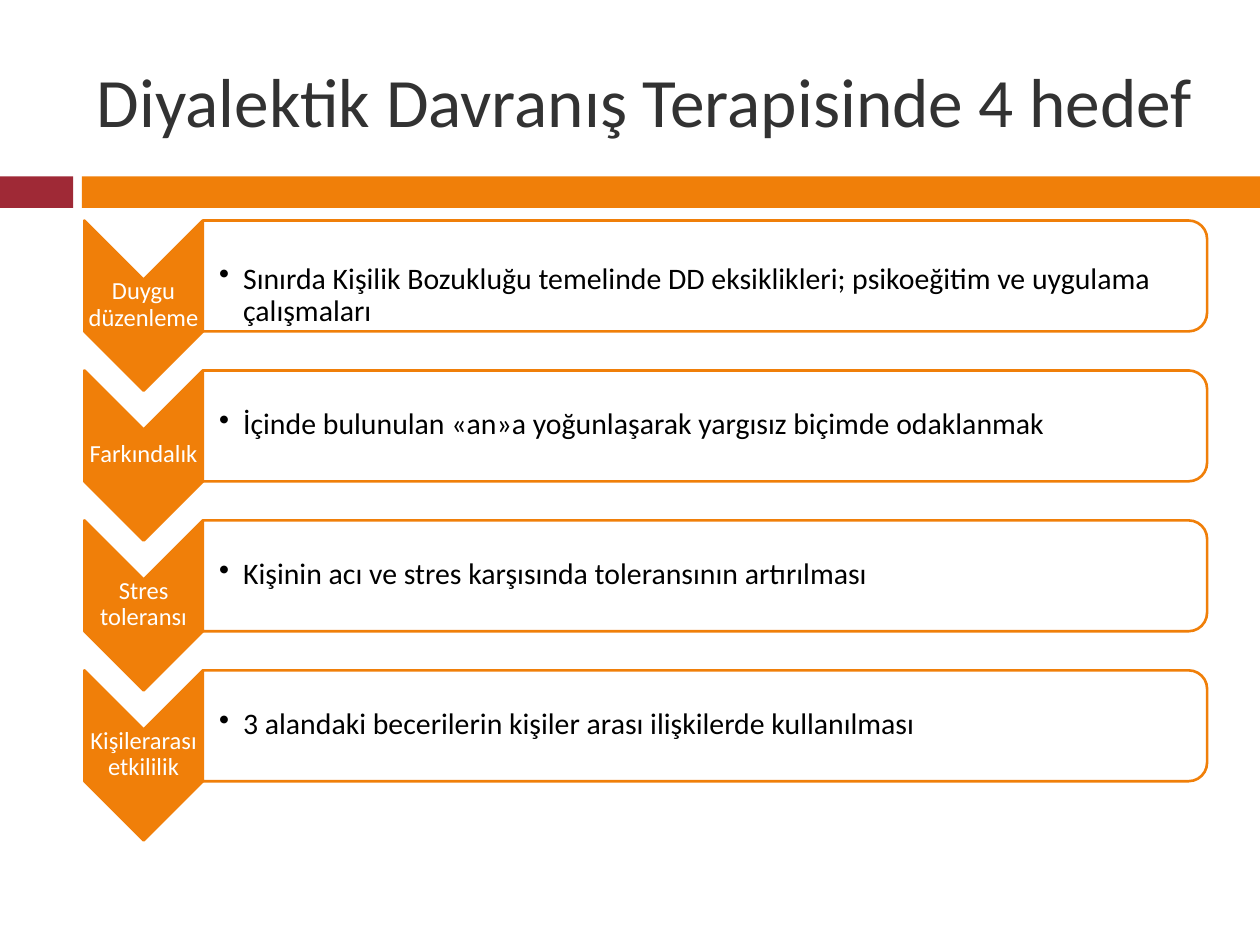
from dataclasses import dataclass

import pptx
import pptx.dml.color
import pptx.enum.shapes
import pptx.enum.text
import pptx.oxml.ns
import pptx.shapes.autoshape
import pptx.slide
import pptx.util
from lxml import etree

Inches = pptx.util.Inches
RGBColor = pptx.dml.color.RGBColor
Preset = pptx.enum.shapes.MSO_SHAPE
Align = pptx.enum.text.PP_ALIGN


@dataclass(frozen=True)
class Theme:
    orange: RGBColor = RGBColor(0xF0, 0x7F, 0x09)
    red: RGBColor = RGBColor(0x9F, 0x29, 0x36)
    white: RGBColor = RGBColor(0xFF, 0xFF, 0xFF)
    black: RGBColor = RGBColor(0x00, 0x00, 0x00)
    heading: RGBColor = RGBColor(0x32, 0x32, 0x32)
    font: str = "Calibri"
    title_size: float = 39.6
    label_size: float = 14
    detail_size: float = 17
    outline: float = 1.5


@dataclass(frozen=True)
class Box:
    left: float
    top: float
    width: float
    height: float

    def lengths(self) -> list[pptx.util.Length]:
        return [Inches(n) for n in (self.left, self.top, self.width, self.height)]

    def before_quarter_turn(self) -> "Box":
        """Return the box that covers this one once it is rotated by 90 degrees."""
        shift = (self.width - self.height) / 2
        return Box(self.left + shift, self.top - shift, self.height, self.width)


@dataclass(frozen=True)
class Goal:
    label: str
    detail: str
    detail_drop: float = 0


THEME = Theme()
GOALS = [
    Goal(
        "Duygu düzenleme",
        "Sınırda Kişilik Bozukluğu temelinde DD eksiklikleri; "
        "psikoeğitim ve uygulama çalışmaları",
        detail_drop=0.16,
    ),
    Goal("Farkındalık", "İçinde bulunulan «an»a yoğunlaşarak yargısız biçimde odaklanmak"),
    Goal("Stres toleransı", "Kişinin acı ve stres karşısında toleransının artırılması"),
    Goal("Kişilerarası etkililik", "3 alandaki becerilerin kişiler arası ilişkilerde kullanılması"),
]
FIRST_TOP = 1.75
PITCH = 1.19
INDENT = 0.19


def add_filled(
    slide: pptx.slide.Slide, preset: Preset, box: Box, fill: RGBColor
) -> pptx.shapes.autoshape.Shape:
    shape = slide.shapes.add_shape(preset, *box.lengths())
    shape.shadow.inherit = False
    shape.fill.solid()
    shape.fill.fore_color.rgb = fill
    shape.line.fill.background()
    return shape


def add_turned(slide: pptx.slide.Slide, preset: Preset, box: Box, fill: RGBColor) -> None:
    """Draw an outlined preset turned by 90 degrees so that it covers the box."""
    shape = add_filled(slide, preset, box.before_quarter_turn(), fill)
    shape.rotation = 90
    shape.line.color.rgb = THEME.orange
    shape.line.width = pptx.util.Pt(THEME.outline)


def add_text(
    slide: pptx.slide.Slide,
    box: Box,
    text: str,
    size: float,
    color: RGBColor,
    align: Align = Align.LEFT,
    left_inset: float = 0.01,
    inset: float = 0.01,
    line_spacing: float = 0.9,
    bullet: bool = False,
) -> None:
    frame = slide.shapes.add_textbox(*box.lengths()).text_frame
    frame.word_wrap = True
    frame.vertical_anchor = pptx.enum.text.MSO_ANCHOR.MIDDLE
    frame.margin_left = Inches(left_inset)
    frame.margin_top = frame.margin_right = frame.margin_bottom = Inches(inset)
    paragraph = frame.paragraphs[0]
    paragraph.text = text
    paragraph.alignment = align
    paragraph.line_spacing = line_spacing
    paragraph.font.name = THEME.font
    paragraph.font.size = pptx.util.Pt(size)
    paragraph.font.color.rgb = color
    if bullet:
        properties = paragraph._p.get_or_add_pPr()
        properties.set("marL", str(Inches(INDENT)))
        properties.set("indent", str(Inches(-INDENT)))
        mark = etree.Element(pptx.oxml.ns.qn("a:buChar"), char="•")
        properties.find(pptx.oxml.ns.qn("a:defRPr")).addprevious(mark)


def add_goal(slide: pptx.slide.Slide, goal: Goal, top: float) -> None:
    add_turned(slide, Preset.CHEVRON, Box(0.67, top, 0.94, 1.35), THEME.orange)
    add_text(slide, Box(0.67, top + 0.47, 0.94, 0.4), goal.label,
             THEME.label_size, THEME.white, Align.CENTER)
    add_turned(slide, Preset.ROUND_2_SAME_RECTANGLE, Box(1.61, top, 7.97, 0.88), THEME.white)
    add_text(slide, Box(1.61, top + 0.04 + goal.detail_drop, 7.93, 0.79), goal.detail,
             THEME.detail_size, THEME.black, left_inset=0.13, bullet=True)


def main() -> None:
    presentation = pptx.Presentation()
    presentation.slide_width = Inches(10)
    presentation.slide_height = Inches(7.5)
    slide = presentation.slides.add_slide(presentation.slide_layouts[6])

    add_filled(slide, Preset.RECTANGLE, Box(0, 1.4, 0.58, 0.25), THEME.red)
    add_filled(slide, Preset.RECTANGLE, Box(0.65, 1.4, 9.35, 0.25), THEME.orange)
    add_text(slide, Box(0.67, 0.25, 8.92, 1.08), "Diyalektik Davranış Terapisinde 4 hedef",
             THEME.title_size, THEME.heading, left_inset=0.1, inset=0.05, line_spacing=1.0)
    for row, goal in enumerate(GOALS):
        add_goal(slide, goal, FIRST_TOP + row * PITCH)

    presentation.save("out.pptx")


if __name__ == "__main__":
    main()
